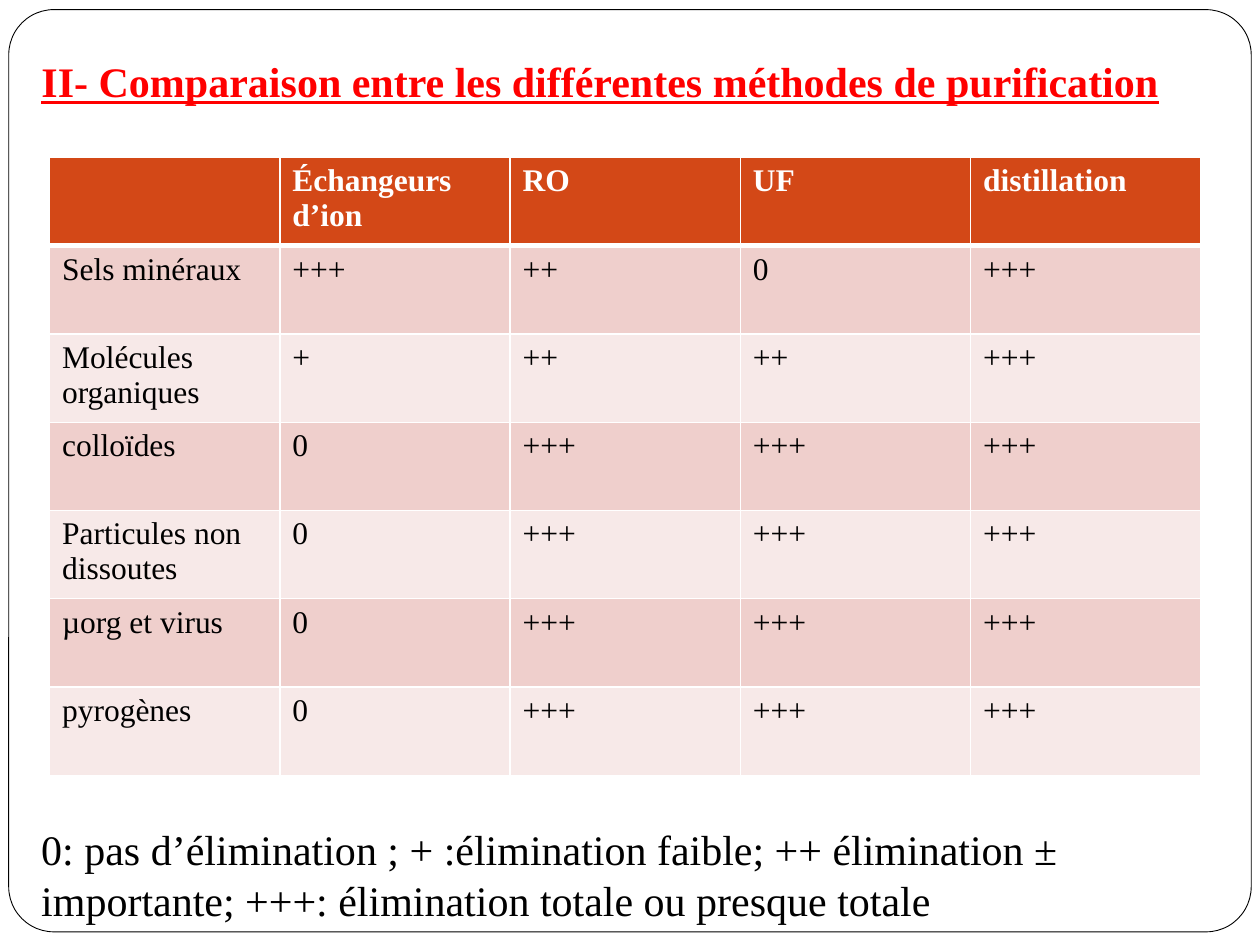
from dataclasses import dataclass

from lxml.etree import SubElement
from pptx import Presentation
from pptx.dml.color import RGBColor as Rgb
from pptx.enum.shapes import MSO_SHAPE as Shape
from pptx.enum.text import MSO_ANCHOR as Anchor
from pptx.enum.text import MSO_AUTO_SIZE as Fit
from pptx.enum.text import PP_ALIGN as Align
from pptx.oxml.ns import qn
from pptx.util import Pt


@dataclass(frozen=True)
class Theme:
    font: str = "Times New Roman"
    black: str = "000000"
    white: str = "FFFFFF"
    red: str = "FF0000"
    head: str = "D34817"
    bands: tuple = ("EFCFCC", "F7E9E8")
    large: int = 24
    small: int = 18
    lead: int = 29


def color(code):
    return Rgb.from_string(code)


def write(frame, text, size, ink, font, bold=False, line=False, lead=None):
    """Put one formatted paragraph in a text frame."""
    frame.word_wrap = True
    para = frame.paragraphs[0]
    para.alignment = Align.LEFT
    if lead:
        para.line_spacing = Pt(lead)
    run = para.add_run()
    run.text = text
    face = run.font
    face.name, face.size = font, Pt(size)
    face.bold, face.underline = bold, line
    face.color.rgb = color(ink)
    return para


def edge(cell, side, width, ink):
    """Draw one border of a table cell."""
    props = cell._tc.get_or_add_tcPr()
    line = SubElement(props, qn(f"a:ln{side}"), w=str(Pt(width)))
    fill = SubElement(line, qn("a:solidFill"))
    SubElement(fill, qn("a:srgbClr"), val=ink)


class Page:
    def __init__(self, deck, theme):
        self.theme = theme
        self.slide = deck.slides.add_slide(deck.slide_layouts[5])
        self.shapes = self.slide.shapes

    def frame(self, left, top, width, height, round_by):
        box = self.shapes.add_shape(Shape.ROUNDED_RECTANGLE, Pt(left),
                                    Pt(top), Pt(width), Pt(height))
        box.adjustments[0] = round_by
        box.shadow.inherit = False
        box.fill.solid()
        box.fill.fore_color.rgb = color(self.theme.white)
        box.line.color.rgb = color(self.theme.black)
        box.line.width = Pt(0.5)
        # Keep the frame behind the title
        self.shapes.title.element.addprevious(box.element)

    def title(self, text, left, top, width, height, hang):
        box, look = self.shapes.title, self.theme
        box.left, box.top = Pt(left), Pt(top)
        box.width, box.height = Pt(width), Pt(height)
        box.text_frame.vertical_anchor = Anchor.TOP
        para = write(box.text_frame, text, look.large, look.red, look.font,
                     bold=True, line=True, lead=look.lead)
        box.text_frame.auto_size = Fit.SHAPE_TO_FIT_TEXT
        props = para._p.get_or_add_pPr()
        props.set("marL", str(Pt(hang)))
        props.set("indent", str(-Pt(hang)))

    def note(self, text, left, top, width, height):
        look = self.theme
        box = self.shapes.add_textbox(Pt(left), Pt(top), Pt(width), Pt(height))
        write(box.text_frame, text, look.large, look.black, look.font,
              lead=look.lead)

    def table(self, rows, left, top, width, height):
        look = self.theme
        grid = self.shapes.add_table(len(rows), len(rows[0]), Pt(left),
                                     Pt(top), Pt(width), Pt(height)).table
        for y, row in enumerate(rows):
            head = y == 0
            back = look.head if head else look.bands[(y - 1) % 2]
            ink = look.white if head else look.black
            for x, text in enumerate(row):
                cell = grid.cell(y, x)
                for side in "LRTB":
                    thick = (head and side == "B") or (y == 1 and side == "T")
                    edge(cell, side, 3 if thick else 1, look.white)
                cell.fill.solid()
                cell.fill.fore_color.rgb = color(back)
                if text:
                    write(cell.text_frame, text, look.small, ink, look.font,
                          bold=head)


def main():
    deck = Presentation()
    deck.slide_width, deck.slide_height = Pt(720), Pt(540)
    page = Page(deck, Theme())

    # Frame and title
    page.frame(5, 5.5, 710, 527, 0.049)
    page.title("II- Comparaison entre les différentes méthodes de purification",
               16.5, 28, 670, 36, 27)

    # Comparison of the methods
    page.table([
        ("", "Échangeurs d’ion", "RO", "UF", "distillation"),
        ("Sels minéraux", "+++", "++", "0", "+++"),
        ("Molécules organiques", "+", "++", "++", "+++"),
        ("colloïdes", "0", "+++", "+++", "+++"),
        ("Particules non dissoutes", "0", "+++", "+++", "+++"),
        ("µorg et virus", "0", "+++", "+++", "+++"),
        ("pyrogènes", "0", "+++", "+++", "+++"),
    ], 28.3, 90, 658, 353)

    # Key to the signs
    page.note("0: pas d’élimination ; + :élimination faible; ++ élimination ± "
              "importante; +++: élimination totale ou presque totale",
              16.5, 467, 692, 94)
    deck.save("out.pptx")


if __name__ == "__main__":
    main()
